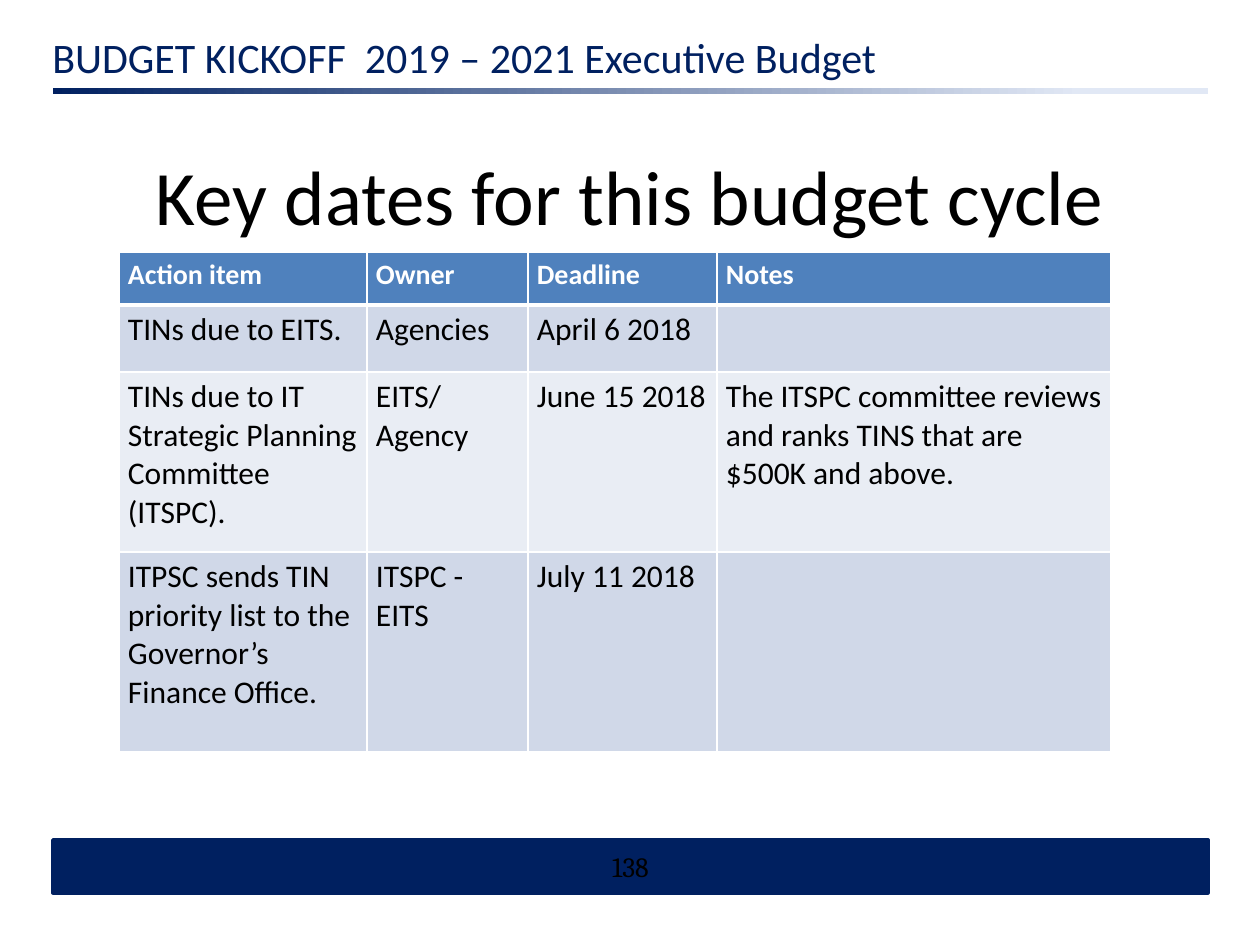
from lxml import etree
from pptx import Presentation
from pptx.dml.color import RGBColor
from pptx.enum.shapes import MSO_SHAPE
from pptx.enum.text import MSO_ANCHOR, PP_ALIGN
from pptx.oxml.ns import qn
from pptx.util import Emu, Pt

RECTANGLE = MSO_SHAPE.RECTANGLE
MIDDLE = MSO_ANCHOR.MIDDLE
LEFT, CENTER = PP_ALIGN.LEFT, PP_ALIGN.CENTER
SCALE = 914400 / 126
COLORS = {
    "navy": "002060", "pale": "E1E8F5", "white": "FFFFFF", "black": "000000",
    "header": "4F81BD", "band": "D0D8E8", "light": "E9EDF4",
}
COLUMN_WIDTHS = [248, 161, 189, 394]
ROW_HEIGHTS = [53, 67, 180, 200]
KEY_DATES = [
    ["Action item", "Owner", "Deadline", "Notes"],
    ["TINs due to EITS.", "Agencies", "April 6 2018", ""],
    ["TINs due to IT Strategic Planning Committee (ITSPC).", "EITS/Agency", "June 15 2018",
     "The ITSPC committee reviews and ranks TINS that are $500K and above."],
    ["ITPSC sends TIN priority list to the Governor’s Finance Office.", "ITSPC - EITS",
     "July 11 2018", ""],
]


def px(length):
    return Emu(round(length * SCALE))


def rgb(name):
    return RGBColor.from_string(COLORS[name])


class SlideBuilder:
    """Draws styled elements on the current slide."""

    def __init__(self, slide, font="Calibri"):
        self.slide = slide
        self.font = font

    def add_text_run(self, paragraph, text, size, color, bold=False, font=None):
        run = paragraph.add_run()
        run.text = text
        run.font.name = font or self.font
        run.font.size = Pt(size)
        run.font.bold = bold
        run.font.color.rgb = rgb(color)

    def text(self, box, text, size, color, align=LEFT, font=None):
        frame = self.slide.shapes.add_textbox(*map(px, box)).text_frame
        frame.word_wrap = True
        frame.vertical_anchor = MIDDLE
        paragraph = frame.paragraphs[0]
        paragraph.alignment = align
        self.add_text_run(paragraph, text, size, color, font=font)

    def rectangle(self, box, color):
        shape = self.slide.shapes.add_shape(RECTANGLE, *map(px, box))
        shape.shadow.inherit = False
        shape.fill.solid()
        shape.fill.fore_color.rgb = rgb(color)
        shape.line.color.rgb = rgb(color)
        shape.line.width = Pt(2)

    def gradient_rule(self, box, stops):
        shape = self.slide.shapes.add_shape(RECTANGLE, *map(px, box))
        shape.shadow.inherit = False
        shape.line.fill.background()
        shape.fill.gradient()
        shape.fill.gradient_angle = 0
        for stop, (position, color) in zip(shape.fill.gradient_stops, stops):
            stop.position = position
            stop.color.rgb = rgb(color)

    def borders(self, cell, bottom_width):
        properties = cell._tc.get_or_add_tcPr()
        widths = {"a:lnL": 1, "a:lnR": 1, "a:lnT": 1, "a:lnB": bottom_width}
        for index, (tag, width) in enumerate(widths.items()):
            line = etree.Element(qn(tag), w=str(Pt(width)))
            fill = etree.SubElement(line, qn("a:solidFill"))
            etree.SubElement(fill, qn("a:srgbClr"), val=COLORS["white"])
            properties.insert(index, line)

    def cell(self, cell, text, row):
        is_header = row == 0
        cell.margin_left = cell.margin_right = px(9)
        cell.margin_top = cell.margin_bottom = px(6)
        cell.fill.solid()
        cell.fill.fore_color.rgb = rgb("header" if is_header else "band" if row % 2 else "light")
        self.borders(cell, 3 if is_header else 1)
        if text:
            size, color = (16, "white") if is_header else (18, "black")
            self.add_text_run(cell.text_frame.paragraphs[0], text, size, color, is_header)

    def table(self, left, top, widths, heights, rows):
        box = map(px, (left, top, sum(widths), sum(heights)))
        table = self.slide.shapes.add_table(len(rows), len(widths), *box).table
        for column, width in zip(table.columns, widths):
            column.width = px(width)
        for index, (height, texts) in enumerate(zip(heights, rows)):
            table.rows[index].height = px(height)
            for column, text in enumerate(texts):
                self.cell(table.cell(index, column), text, index)


def main():
    presentation = Presentation()
    presentation.slide_width = px(1260)
    presentation.slide_height = px(945)
    builder = SlideBuilder(presentation.slides.add_slide(presentation.slide_layouts[6]))
    footer = (53, 840, 1155, 53)
    builder.rectangle(footer, "navy")
    builder.gradient_rule((53, 88, 1155, 6), [(0, "navy"), (0.89, "pale")])
    builder.text((40, 32, 1168, 50), "BUDGET KICKOFF  2019 – 2021 Executive Budget", 24, "navy")
    builder.text((63, 116, 1134, 158), "Key dates for this budget cycle", 44, "black", CENTER)
    builder.table(119, 252, COLUMN_WIDTHS, ROW_HEIGHTS, KEY_DATES)
    builder.text(footer, "138", 16, "black", CENTER, "Cambria")
    presentation.save("out.pptx")


if __name__ == "__main__":
    main()
